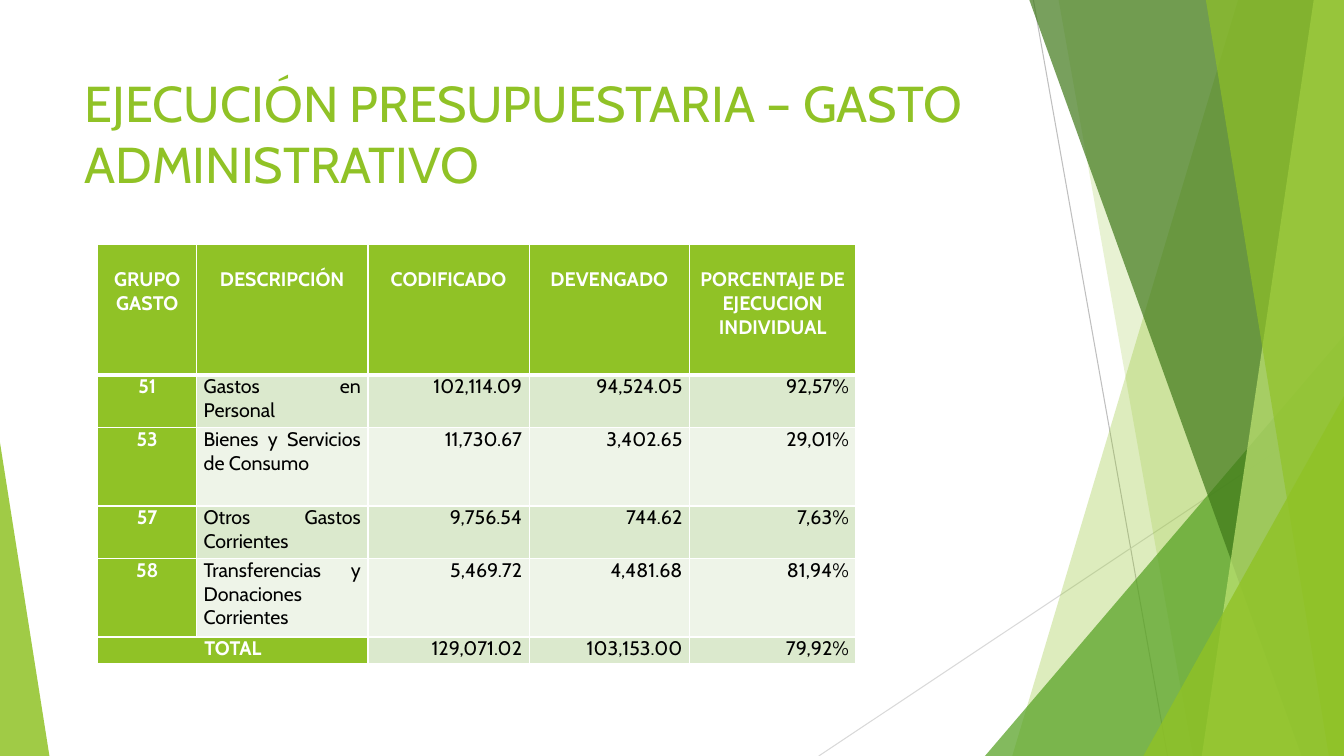
from pptx import Presentation, util as u
from pptx.dml.color import RGBColor
from pptx.enum import shapes, text
from pptx.oxml import parse_xml
from pptx.oxml.ns import nsdecls, qn
from lxml import etree

THEME = dict(font="Cabin", title=36, body=14, green="90C226", mid="54A021",
             dark="3F7819", light="C0E474", odd="DBE9CD", even="EEF4E8",
             white="FFFFFF", black="000000", line1="BFBFBF", line2="D9D9D9")

prs = Presentation()
prs.slide_width, prs.slide_height = u.Inches(13.33), u.Inches(7.5)
W, H = prs.slide_width / 100, prs.slide_height / 100  # one percent of the slide
s = prs.slides.add_slide(prs.slide_layouts[5])


def paint(sp, colour, opacity):
    sp.shadow.inherit = False
    sp.line.fill.background()
    sp.fill.solid()
    sp.fill.fore_color.rgb = RGBColor.from_string(THEME[colour])
    clr = sp.fill._xPr.find(qn("a:solidFill"))[0]
    etree.SubElement(clr, qn("a:alpha"), val=str(opacity * 1000))


def write(p, words, size, colour, bold=False):
    r = p.add_run()
    r.text = words
    r.font.name, r.font.size, r.font.bold = THEME["font"], u.Pt(THEME[size]), bold
    r.font.color.rgb = RGBColor.from_string(THEME[colour])


# Thin lines: x1, y1, x2, y2 in percent
for x1, y1, x2, y2, colour in [(76.89, 0, 86.87, 100, "line1"),
                               (100, 53.73, 60.92, 100, "line2")]:
    line = s.shapes.add_connector(shapes.MSO_CONNECTOR.STRAIGHT, int(x1 * W),
                                  int(y1 * H), int(x2 * W), int(y2 * H))
    line.line.color.rgb = RGBColor.from_string(THEME[colour])
    line.line.width = u.Pt(0.75)
    etree.SubElement(line._element.spPr, qn("a:effectLst"))

# Facets from back to front. Bands run to the right edge: top x, bottom x.
# Triangles rest on the bottom edge: left, top, width, apex.
facets = [
    ("band", (92.12, 75.32), "green", 30),
    ("band", (78.77, 88.75), "green", 20),
    ("triangle", (73.29, 44.4, 26.71, 1), "mid", 72),
    ("band", (76.59, 96.85), "dark", 70),
    ("band", (97.75, 89.42), "light", 70),
    ("band", (89.72, 98.87), "green", 65),
    ("triangle", (85.07, 52.4, 14.93, 1), "green", 80),
    ("triangle", (0, 58.53, 3.68, 0), "green", 85),
]
for kind, place, colour, opacity in facets:
    if kind == "band":
        top, bottom = place
        fb = s.shapes.build_freeform(int(top * W), 0)
        fb.add_line_segments([(int(x * W), int(y * H)) for x, y in
                              [(100, 0), (100, 100), (bottom, 100)]], close=True)
        sp = fb.convert_to_shape()
    else:
        x, y, w, apex = place
        sp = s.shapes.add_shape(shapes.MSO_SHAPE.ISOSCELES_TRIANGLE, int(x * W),
                                int(y * H), int(w * W), int((100 - y) * H))
        sp.adjustments[0] = apex
    paint(sp, colour, opacity)

# Title
title = s.shapes.title
title.left, title.top = int(5.55 * W), int(8.93 * H)
title.width, title.height = int(70.52 * W), int(19.2 * H)
tf = title.text_frame
tf.word_wrap = True
tf.auto_size = text.MSO_AUTO_SIZE.NONE
tf.vertical_anchor = text.MSO_ANCHOR.TOP
tf.paragraphs[0].alignment = text.PP_ALIGN.LEFT
write(tf.paragraphs[0], "EJECUCIÓN PRESUPUESTARIA – GASTO ADMINISTRATIVO", "title", "green")

# Budget table
rows = [
    ("GRUPO GASTO", "DESCRIPCIÓN", "CODIFICADO", "DEVENGADO",
     "PORCENTAJE DE EJECUCION INDIVIDUAL"),
    ("51", "Gastos en Personal", "102,114.09", "94,524.05", "92,57%"),
    ("53", "Bienes y Servicios de Consumo", "11,730.67", "3,402.65", "29,01%"),
    ("57", "Otros Gastos Corrientes", "9,756.54", "744.62", "7,63%"),
    ("58", "Transferencias y Donaciones Corrientes", "5,469.72", "4,481.68", "81,94%"),
    ("TOTAL", "", "129,071.02", "103,153.00", "79,92%"),
]
col_widths = [7.35, 12.75, 12, 11.93, 12.38]
row_heights = [17.33, 6.93, 10.4, 6.93, 10.4, 3.47]
A = text.PP_ALIGN
aligns = [A.CENTER, A.JUSTIFY, A.RIGHT, A.RIGHT, A.RIGHT]

table = s.shapes.add_table(len(rows), len(col_widths), int(7.28 * W), int(32.27 * H),
                           int(sum(col_widths) * W), int(sum(row_heights) * H)).table
for col, width in zip(table.columns, col_widths):
    col.width = int(width * W)
for row, height in zip(table.rows, row_heights):
    row.height = int(height * H)
total = len(rows) - 1
table.cell(total, 0).merge(table.cell(total, 1))

for i, row in enumerate(rows):
    for j, words in enumerate(row):
        cell = table.cell(i, j)
        strong = i == 0 or j == 0 or (i == total and j == 1)
        cell.margin_left = cell.margin_right = u.Inches(0.07)
        cell.margin_top = u.Pt(17) if i == 0 else 0
        cell.margin_bottom = 0
        # White borders, thicker under the header
        for side in "LRTB":
            thick = (i == 0 and side == "B") or (i == 1 and side == "T")
            cell._tc.get_or_add_tcPr().append(parse_xml(
                f'<a:ln{side} {nsdecls("a")} w="{u.Pt(3 if thick else 1)}"><a:solidFill>'
                f'<a:srgbClr val="{THEME["white"]}"/></a:solidFill></a:ln{side}>'))
        cell.fill.solid()
        shade = "green" if strong else "odd" if i % 2 else "even"
        cell.fill.fore_color.rgb = RGBColor.from_string(THEME[shade])
        if words:
            p = cell.text_frame.paragraphs[0]
            p.alignment = A.CENTER if i == 0 else aligns[j]
            write(p, words, "body", "white" if strong else "black", strong)

prs.save("out.pptx")
